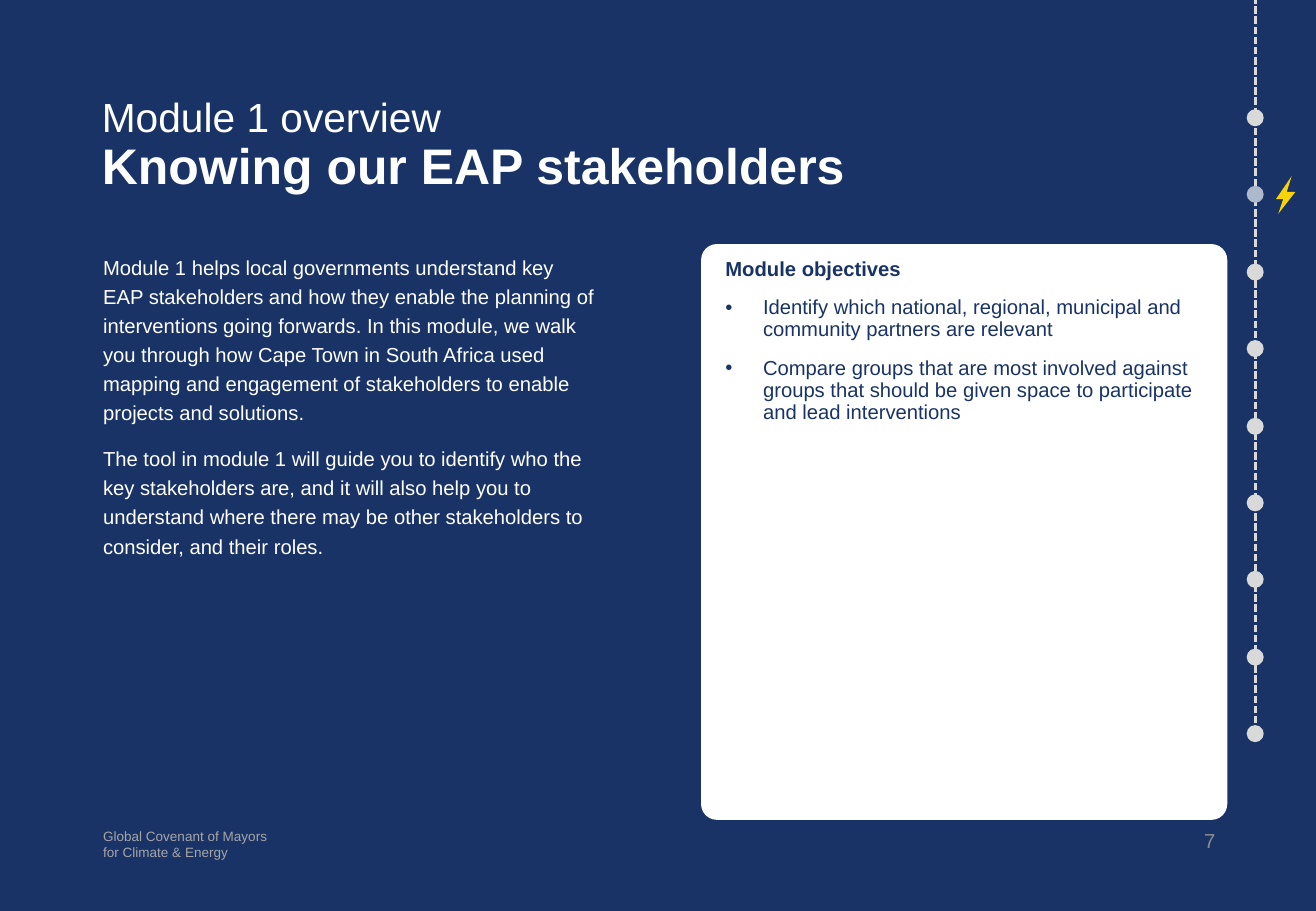
from lxml.etree import SubElement
from pptx import Presentation
from pptx.dml.color import RGBColor
from pptx.enum.dml import MSO_LINE as Dash
from pptx.enum.shapes import MSO_CONNECTOR as Link, MSO_SHAPE as Kind
from pptx.enum.text import PP_ALIGN as Align
from pptx.oxml.ns import qn
from pptx.util import Pt

PX = 9144
COLORS = {
    "navy": "193366",
    "white": "FFFFFF",
    "dot": "D9D9D9",
    "active": "ADB9CA",
    "bolt": "FAD307",
    "footer": "A6A6A6",
    "number": "8C8C8C",
}
INTRO = [
    "Module 1 helps local governments understand key\vEAP stakeholders and how they "
    "enable the planning of interventions going forwards. In this module, we walk you "
    "through how Cape Town in South Africa used mapping and engagement of stakeholders "
    "to enable projects and solutions.",
    "The tool in module 1 will guide you to identify who the key stakeholders are, and "
    "it will also help you to understand where there may be other stakeholders to "
    "consider, and their roles.",
]
GOALS = [
    "Identify which national, regional, municipal and community partners are relevant",
    "Compare groups that are most involved against groups that should be given space "
    "to participate and lead interventions",
]
BOLT = [
    [(1057, 164), (1050, 164), (1063, 145), (1058, 161)],
    [(1058, 158), (1066, 158), (1052, 176), (1057, 161)],
]
STOPS = 9
ACTIVE = 1


def rgb(name):
    """Look up a palette colour."""
    return RGBColor.from_string(COLORS[name])


def scale(*sizes):
    """Turn px lengths into EMU."""
    return [size * PX for size in sizes]


def paint(shape, color):
    """Give a shape a flat fill without outline or shadow."""
    shape.shadow.inherit = False
    shape.fill.solid()
    shape.fill.fore_color.rgb = rgb(color)
    shape.line.fill.background()


def add_solid(slide, kind, box, color):
    """Add a plain filled preset shape."""
    shape = slide.shapes.add_shape(kind, *scale(*box))
    paint(shape, color)
    return shape


def add_frame(slide, box, pad=(10, 5)):
    """Add a wrapping text box and return its text frame."""
    frame = slide.shapes.add_textbox(*scale(*box)).text_frame
    frame.word_wrap = True
    frame.margin_left = frame.margin_right = pad[0] * PX
    frame.margin_top = frame.margin_bottom = pad[1] * PX
    return frame


def style(font, size, color, bold=False):
    """Set the look of a font."""
    font.name = "Arial"
    font.size = Pt(size)
    font.bold = bold
    font.color.rgb = rgb(color)


def add_bullet(para):
    """Give a paragraph a hanging round bullet."""
    props = para._p.get_or_add_pPr()
    props.set("marL", str(31 * PX))
    props.set("indent", str(-31 * PX))
    SubElement(props, qn("a:buFont")).set("typeface", "Arial")
    SubElement(props, qn("a:buChar")).set("char", "•")


def add_para(frame, text, size, color, bold=False, space=None, bullet=False):
    """Write the next paragraph of a text frame."""
    first = not frame.paragraphs[0].text
    para = frame.paragraphs[0] if first else frame.add_paragraph()
    para.text = text
    if space:
        para.line_spacing = space
        if not first:
            para.space_before = Pt(10)
    if bullet:
        add_bullet(para)
    style(para.font, size, color, bold)
    return para


def add_title(slide):
    """Add the light and bold title lines."""
    para = add_frame(slide, (74, 75, 660, 108)).paragraphs[0]
    para.line_spacing = 0.9
    top = para.add_run()
    top.text = "Module 1 overview"
    style(top.font, 24.1, "white")
    para.add_line_break()
    main_run = para.add_run()
    main_run.text = "Knowing our EAP stakeholders"
    style(main_run.font, 29.6, "white", True)


def add_track(slide):
    """Add the dashed progress line with its dots."""
    track = slide.shapes.add_connector(Link.STRAIGHT, *scale(1033, 604, 1033, 0))
    track.line.color.rgb = rgb("dot")
    track.line.width = Pt(1.5)
    track.line.dash_style = Dash.SQUARE_DOT
    SubElement(track._element.spPr, qn("a:effectLst"))
    for stop in range(STOPS):
        top = 90 + round(stop * 507 / (STOPS - 1))
        color = "active" if stop == ACTIVE else "dot"
        add_solid(slide, Kind.OVAL, (1026, top, 14, 14), color)


def add_bolt(slide):
    """Add the two halves of the lightning bolt."""
    for start, *rest in BOLT:
        pen = slide.shapes.build_freeform(*start, scale=PX)
        pen.add_line_segments(rest, close=True)
        paint(pen.convert_to_shape(), "bolt")


def add_goals(slide):
    """Add the white card and the module objectives."""
    card = add_solid(slide, Kind.ROUNDED_RECTANGLE, (577, 201, 433, 474), "white")
    card.adjustments[0] = 0.03
    frame = add_frame(slide, (577, 201, 433, 474), (20, 12))
    add_para(frame, "Module objectives", 12, "navy", True, 0.9)
    for goal in GOALS:
        add_para(frame, goal, 12, "navy", space=0.9, bullet=True)


def main():
    """Build and save the slide."""
    deck = Presentation()
    deck.slide_width, deck.slide_height = scale(1083, 750)
    slide = deck.slides.add_slide(deck.slide_layouts[6])
    slide.background.fill.solid()
    slide.background.fill.fore_color.rgb = rgb("navy")

    add_title(slide)
    intro = add_frame(slide, (75, 201, 433, 476))
    for text in INTRO:
        add_para(intro, text, 12, "white", space=1.2)
    add_goals(slide)
    add_track(slide)
    add_bolt(slide)

    footer = add_frame(slide, (75, 677, 183, 40))
    add_para(footer, "Global Covenant of Mayors\vfor Climate & Energy", 8, "footer")
    number = add_frame(slide, (958, 677, 52, 40))
    add_para(number, "7", 12, "number").alignment = Align.RIGHT
    deck.save("out.pptx")


if __name__ == "__main__":
    main()
